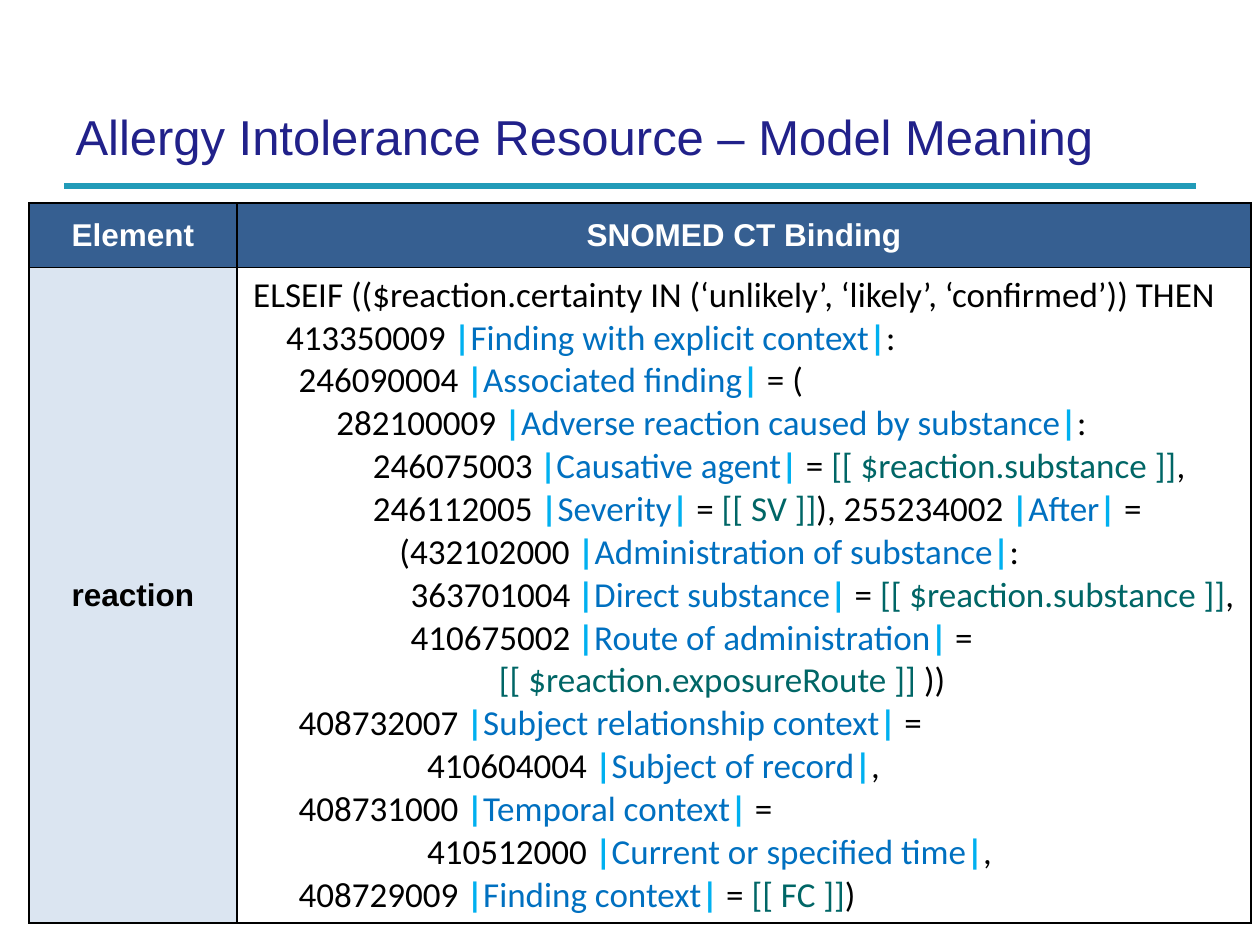
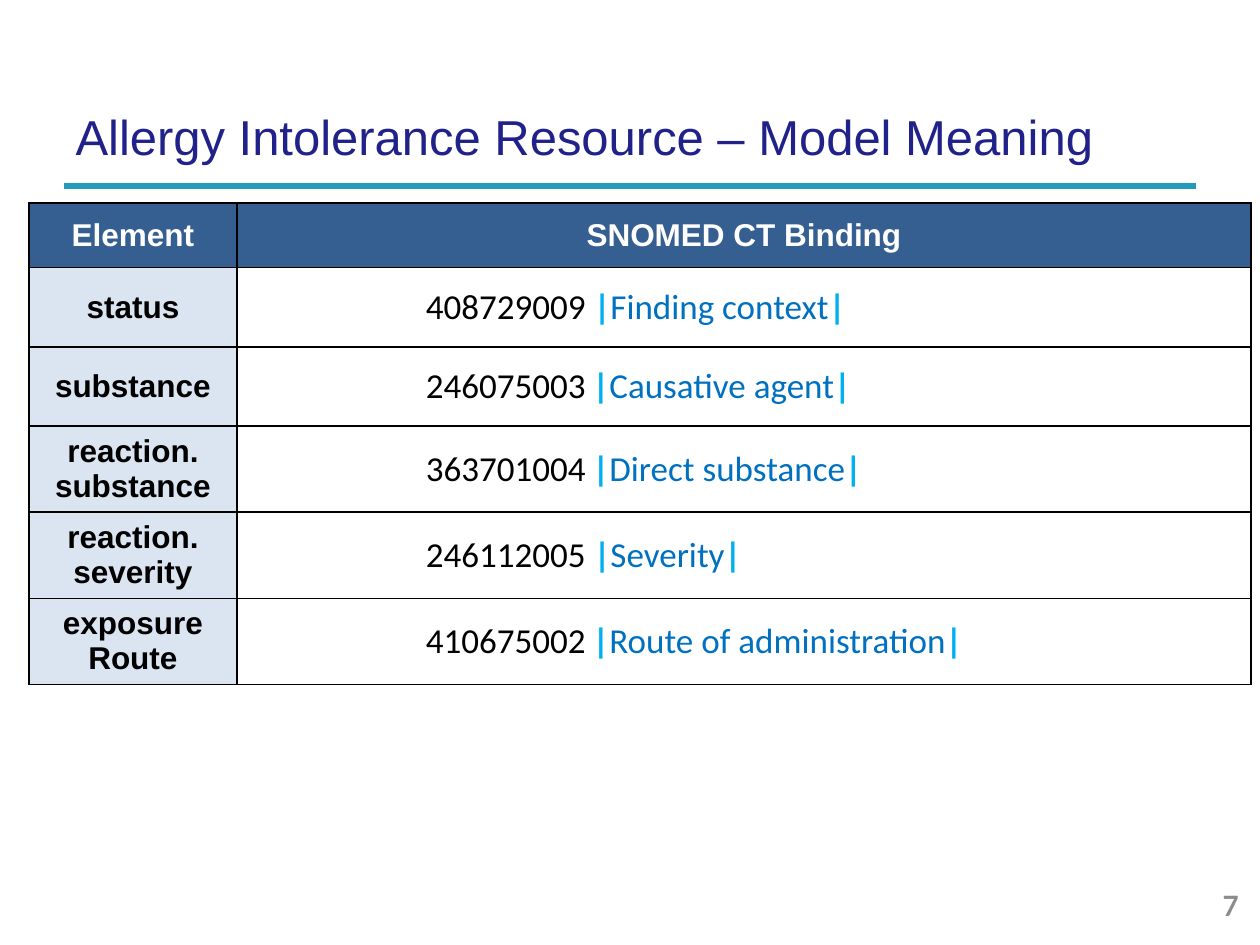
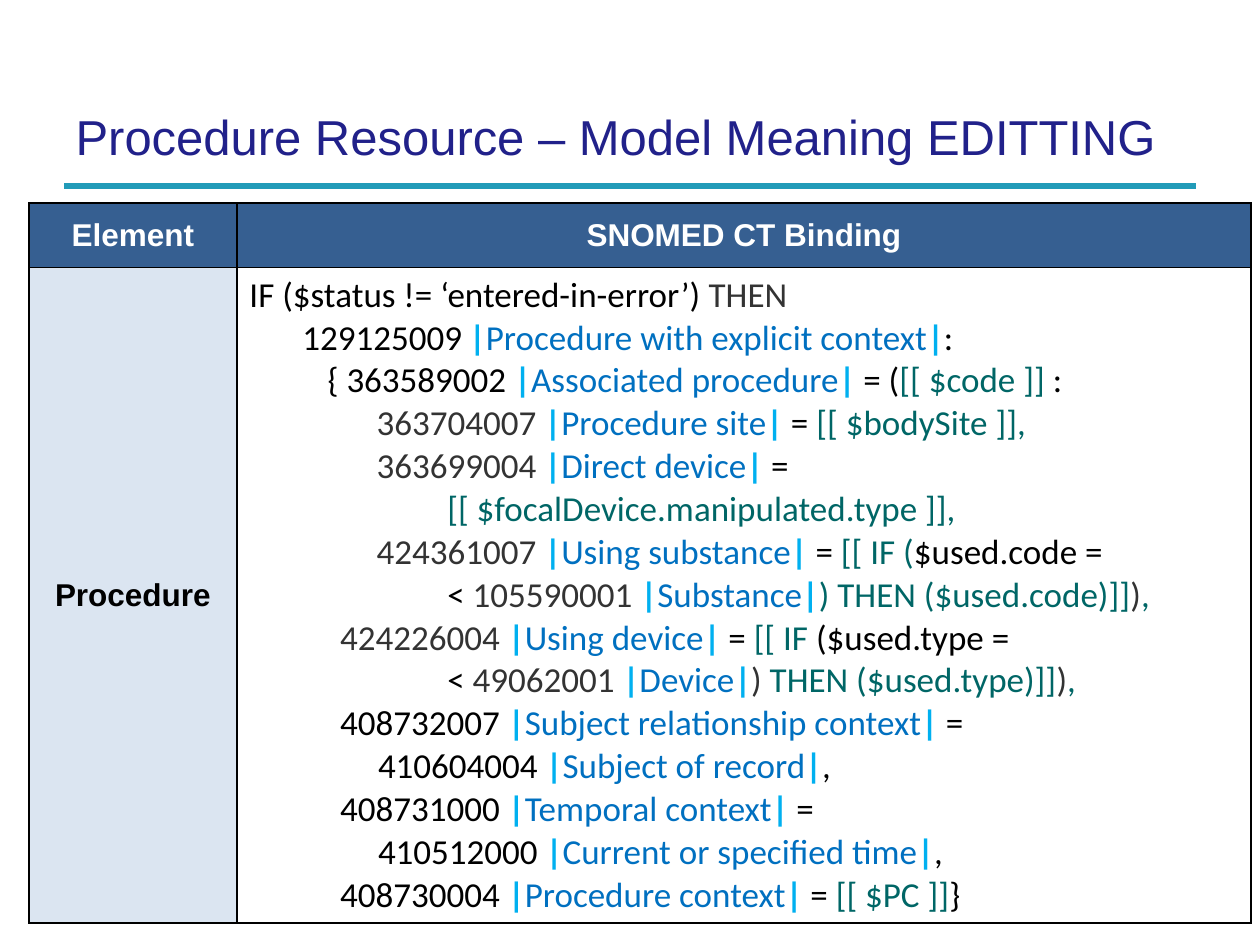
from collections.abc import Iterator
from typing import NamedTuple

from lxml.etree import SubElement
from pptx import Presentation
from pptx.dml.color import RGBColor
from pptx.enum.shapes import MSO_CONNECTOR
from pptx.enum.text import MSO_ANCHOR, MSO_AUTO_SIZE, PP_ALIGN
from pptx.oxml.ns import qn
from pptx.util import Emu, Inches, Pt

NAVY = RGBColor(0x21, 0x21, 0x8A)
RULE_TEAL = RGBColor(0x22, 0x9B, 0xB8)
HEADER_BLUE = RGBColor(0x36, 0x5F, 0x91)
PALE_BLUE = RGBColor(0xDB, 0xE5, 0xF1)
WHITE = RGBColor(0xFF, 0xFF, 0xFF)
BLACK = RGBColor(0, 0, 0)
CYAN = RGBColor(0x00, 0xB0, 0xF0)
TERM_BLUE = RGBColor(0x00, 0x70, 0xC0)
SLOT_GREEN = RGBColor(0x00, 0x66, 0x66)
GREY = RGBColor(0x33, 0x33, 0x33)
PAGE_GREY = RGBColor(0x8C, 0x8C, 0x8C)

WIDTH, HEIGHT = Inches(10), Inches(7.5)
COLUMN_SHARES = (16.5, 80.5)
HEADER_ROW, SHORT_ROW, TALL_ROW = 6.8, 8.4, 69.3
HEADINGS = ("Element", "SNOMED CT Binding")

# Markup of a binding: |term|, `slot`, ^grey code^, ~ for a small space
MARK_COLOURS = {"|": TERM_BLUE, "`": SLOT_GREEN, "^": GREY}


class Line(NamedTuple):
    indent: float  # percent of the slide's width
    markup: str


class Row(NamedTuple):
    element: str
    binding: list[Line]


class BindingSlide(NamedTuple):
    title: str
    row_height: float
    rows: list[Row]
    page: str = ""


ALLERGY_TITLE = "Allergy Intolerance Resource – Model Meaning"

REACTION = [
    Line(0.3, "ELSEIF (($reaction.certainty IN (‘unlikely’, ‘likely’, ‘confirmed’)) THEN"),
    Line(2.9, "413350009 |Finding with explicit context|:"),
    Line(3.9, "246090004 |Associated finding| = ("),
    Line(6.9, "282100009 |Adverse reaction caused by substance|:"),
    Line(9.8, "246075003~|Causative agent| = `[[ $reaction.substance ]]`,"),
    Line(9.8, "246112005 |Severity| =` [[ SV ]]`), 255234002 |After| ="),
    Line(11.9, "(432102000 |Administration of substance|:"),
    Line(12.8, "363701004~|Direct substance| = `[[ $reaction.substance ]]`,"),
    Line(12.8, "410675002~|Route of administration| ="),
    Line(19.8, "`[[ $reaction.exposureRoute ]]` ))"),
    Line(3.9, "408732007 |Subject relationship context| ="),
    Line(14.1, "410604004 |Subject of record|,"),
    Line(3.9, "408731000 |Temporal context| ="),
    Line(14.1, "410512000 |Current or specified time|,"),
    Line(3.9, "408729009 |Finding context| = `[[ FC ]]`)"),
]

PROCEDURE = [
    Line(0, "IF ($status != ‘entered-in-error’) ^THEN^"),
    Line(4.2, "129125009~|Procedure with explicit context|:"),
    Line(6.2, "{ 363589002 |Associated procedure| = (`[[ $code ]]` :"),
    Line(10.1, "^363704007 ^|Procedure site| = `[[ $bodySite ]],`"),
    Line(10.1, "^363699004 ^|Direct device| ="),
    Line(15.7, "`[[ $focalDevice.manipulated.type ]],`"),
    Line(10.1, "^424361007 ^|Using substance| = `[[ IF (`$used.code ="),
    Line(15.7, "< ^105590001 ^|Substance|`) THEN ($used.code)]]`^)^`,`"),
    Line(7.2, "^424226004 ^|Using device| = `[[ IF `($used.type ="),
    Line(15.7, "< ^49062001 ^|Device|^) ^`THEN ($used.type)]]`^)^`,`"),
    Line(7.2, "408732007 |Subject relationship context| ="),
    Line(10.2, "410604004 |Subject of record|,"),
    Line(7.2, "408731000 |Temporal context| ="),
    Line(10.2, "410512000 |Current or specified time|,"),
    Line(7.2, "408730004 |Procedure context| = `[[ $PC ]]`}"),
]

ELEMENTS = {
    "status": "408729009 |Finding context|",
    "substance": "246075003~|Causative agent|",
    "reaction. substance": "363701004~|Direct substance|",
    "reaction. severity": "246112005 |Severity|",
    "exposure Route": "410675002~|Route of administration|",
}

SLIDES = [
    BindingSlide(ALLERGY_TITLE, TALL_ROW, [Row("reaction", REACTION)]),
    BindingSlide(ALLERGY_TITLE, SHORT_ROW,
                 [Row(name, [Line(14, code)]) for name, code in ELEMENTS.items()], "7"),
    BindingSlide("Procedure Resource – Model Meaning EDITTING", TALL_ROW,
                 [Row("Procedure", PROCEDURE)]),
]


def x(percent: float) -> Emu:
    return Emu(round(WIDTH * percent / 100))


def y(percent: float) -> Emu:
    return Emu(round(HEIGHT * percent / 100))


def add_text(p, text: str, *, size: float = 20, font: str = "Calibri",
             colour: RGBColor = BLACK, bold: bool = False, align=None) -> None:
    r = p.add_run()
    r.text = text
    r.font.size, r.font.name, r.font.bold = Pt(size), font, bold
    r.font.color.rgb = colour
    if align is not None:
        p.alignment = align


def split_markup(markup: str) -> Iterator[tuple[str, RGBColor]]:
    """Yield each piece of text with its colour, bars and small spaces apart."""
    colour, text = BLACK, ""
    for ch in markup:
        if ch != "~" and ch not in MARK_COLOURS:
            text += ch
            continue
        if text:
            yield text, colour
            text = ""
        if ch in "|~":
            yield ch, CYAN
        if ch in MARK_COLOURS:
            colour = BLACK if colour == MARK_COLOURS[ch] else MARK_COLOURS[ch]
    if text:
        yield text, colour


def write_binding(tf, lines: list[Line]) -> None:
    for i, line in enumerate(lines):
        p = tf.add_paragraph() if i else tf.paragraphs[0]
        p.alignment = PP_ALIGN.JUSTIFY
        pPr = p._p.get_or_add_pPr()
        pPr.set("marL", str(x(line.indent)))
        pPr.set("indent", "0")
        for text, colour in split_markup(line.markup):
            if text == "~":
                add_text(p, " ", size=14, font="Arial", colour=GREY)
            else:
                add_text(p, text, colour=colour, bold=text == "|")


def style_cell(cell, fill: RGBColor) -> None:
    tcPr = cell._tc.get_or_add_tcPr()
    for side in ("lnL", "lnR", "lnT", "lnB"):
        ln = SubElement(tcPr, qn(f"a:{side}"), w=str(Pt(1)))
        SubElement(SubElement(ln, qn("a:solidFill")), qn("a:srgbClr"), val=str(BLACK))
    cell.fill.solid()
    cell.fill.fore_color.rgb = fill
    cell.vertical_anchor = MSO_ANCHOR.MIDDLE


def write_label(cell, text: str, fill: RGBColor, colour: RGBColor) -> None:
    style_cell(cell, fill)
    cell.margin_top = cell.margin_bottom = Pt(3)
    add_text(cell.text_frame.paragraphs[0], text, size=18, font="Arial",
             colour=colour, bold=True, align=PP_ALIGN.CENTER)


def add_title(s, text: str) -> None:
    title = s.shapes.title
    title.left, title.top, title.width, title.height = x(5), y(10.8), x(90), y(8)
    tf = title.text_frame
    tf.auto_size, tf.word_wrap = MSO_AUTO_SIZE.NONE, True
    tf.vertical_anchor = MSO_ANCHOR.BOTTOM
    tf.margin_left = tf.margin_right = tf.margin_top = tf.margin_bottom = Inches(0.1)
    add_text(tf.paragraphs[0], text, size=28, font="Arial", colour=NAVY,
             align=PP_ALIGN.LEFT)


def add_title_rule(s) -> None:
    rule = s.shapes.add_connector(MSO_CONNECTOR.STRAIGHT, x(5.1), y(19.7), x(94.9), y(19.7))
    rule.line.color.rgb = RULE_TEAL
    rule.line.width = Pt(3)
    SubElement(rule._element.spPr, qn("a:effectLst"))


def add_page_number(s, number: str) -> None:
    tf = s.shapes.add_textbox(x(93.6), y(93.7), x(5.7), y(4.3)).text_frame
    tf.word_wrap = True
    tf.vertical_anchor = MSO_ANCHOR.MIDDLE
    add_text(tf.paragraphs[0], number, size=16, font="Lato", colour=PAGE_GREY,
             bold=True, align=PP_ALIGN.RIGHT)


def add_binding_table(s, rows: list[Row], row_height: float) -> None:
    heights = [HEADER_ROW] + [row_height] * len(rows)
    table = s.shapes.add_table(len(heights), len(HEADINGS), x(2.3), y(21.5),
                               x(sum(COLUMN_SHARES)), y(sum(heights))).table
    table.horz_banding = False
    for column, share in zip(table.columns, COLUMN_SHARES):
        column.width = x(share)
    for table_row, share in zip(table.rows, heights):
        table_row.height = y(share)
    for i, heading in enumerate(HEADINGS):
        write_label(table.cell(0, i), heading, HEADER_BLUE, WHITE)
    for i, row in enumerate(rows, start=1):
        write_label(table.cell(i, 0), row.element, PALE_BLUE, BLACK)
        style_cell(table.cell(i, 1), WHITE)
        write_binding(table.cell(i, 1).text_frame, row.binding)


def main() -> None:
    prs = Presentation()
    prs.slide_width, prs.slide_height = WIDTH, HEIGHT
    title_only = prs.slide_layouts.get_by_name("Title Only")
    for content in SLIDES:
        s = prs.slides.add_slide(title_only)
        add_title(s, content.title)
        add_title_rule(s)
        if content.page:
            add_page_number(s, content.page)
        add_binding_table(s, content.rows, content.row_height)
    prs.save("out.pptx")


if __name__ == "__main__":
    main()
